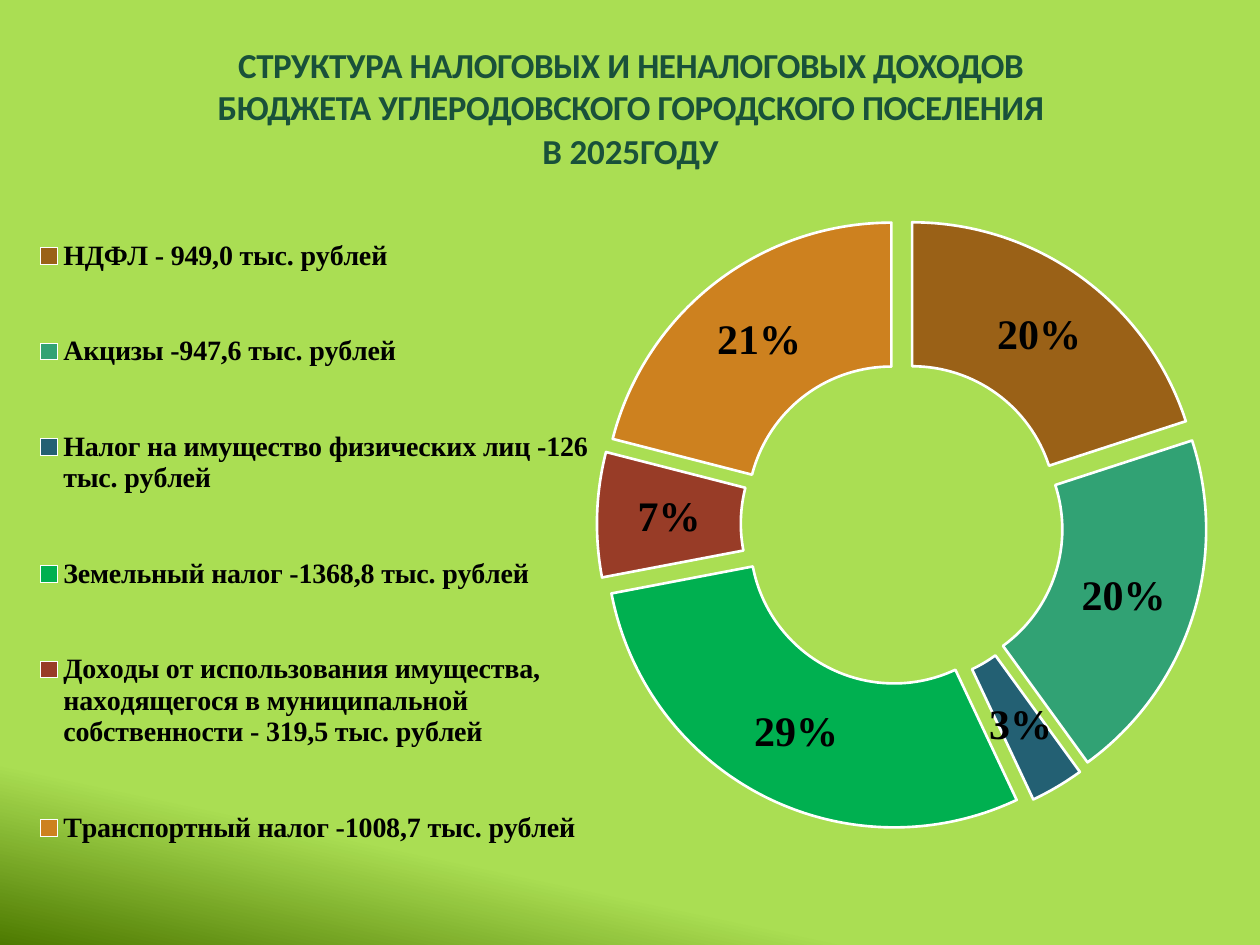
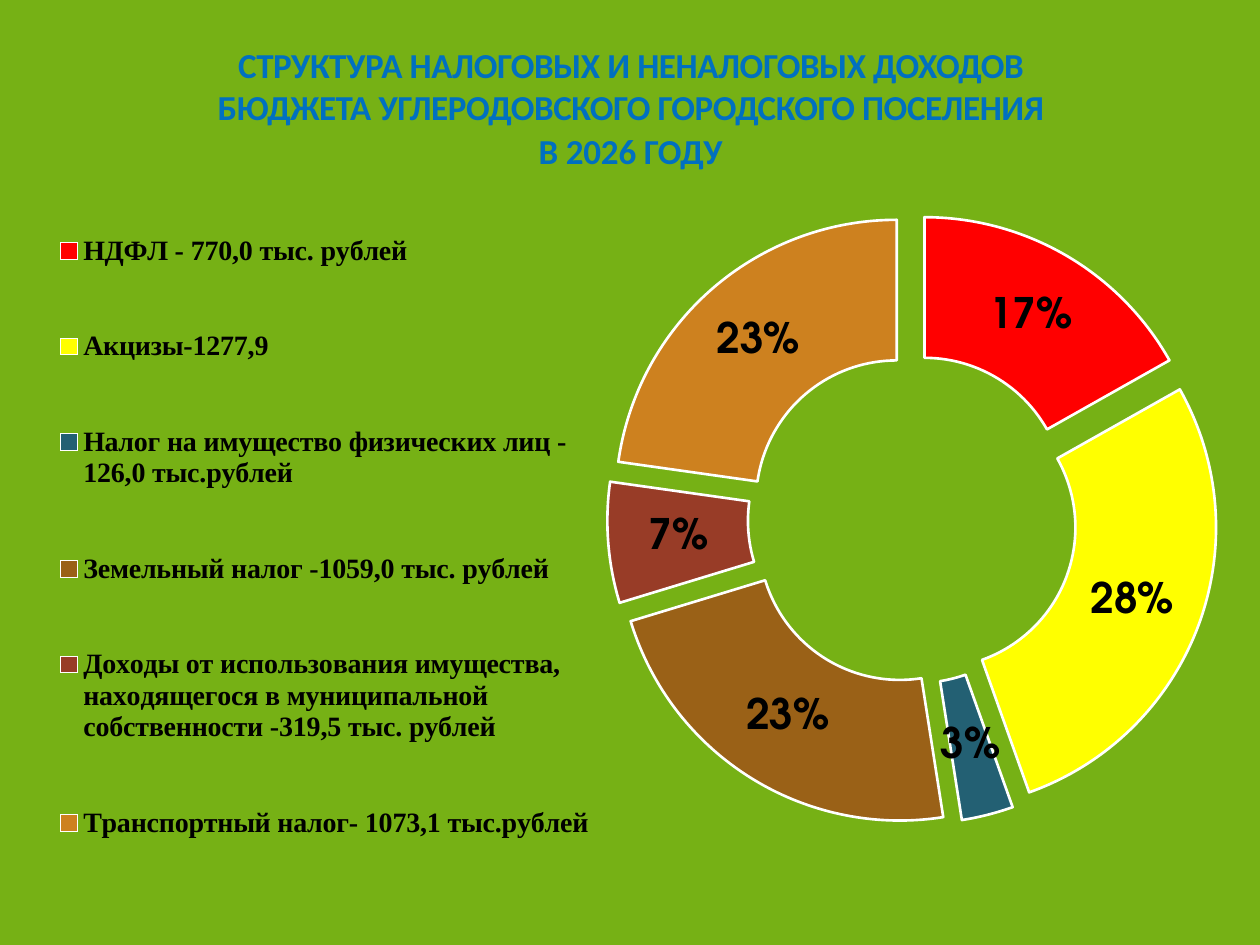
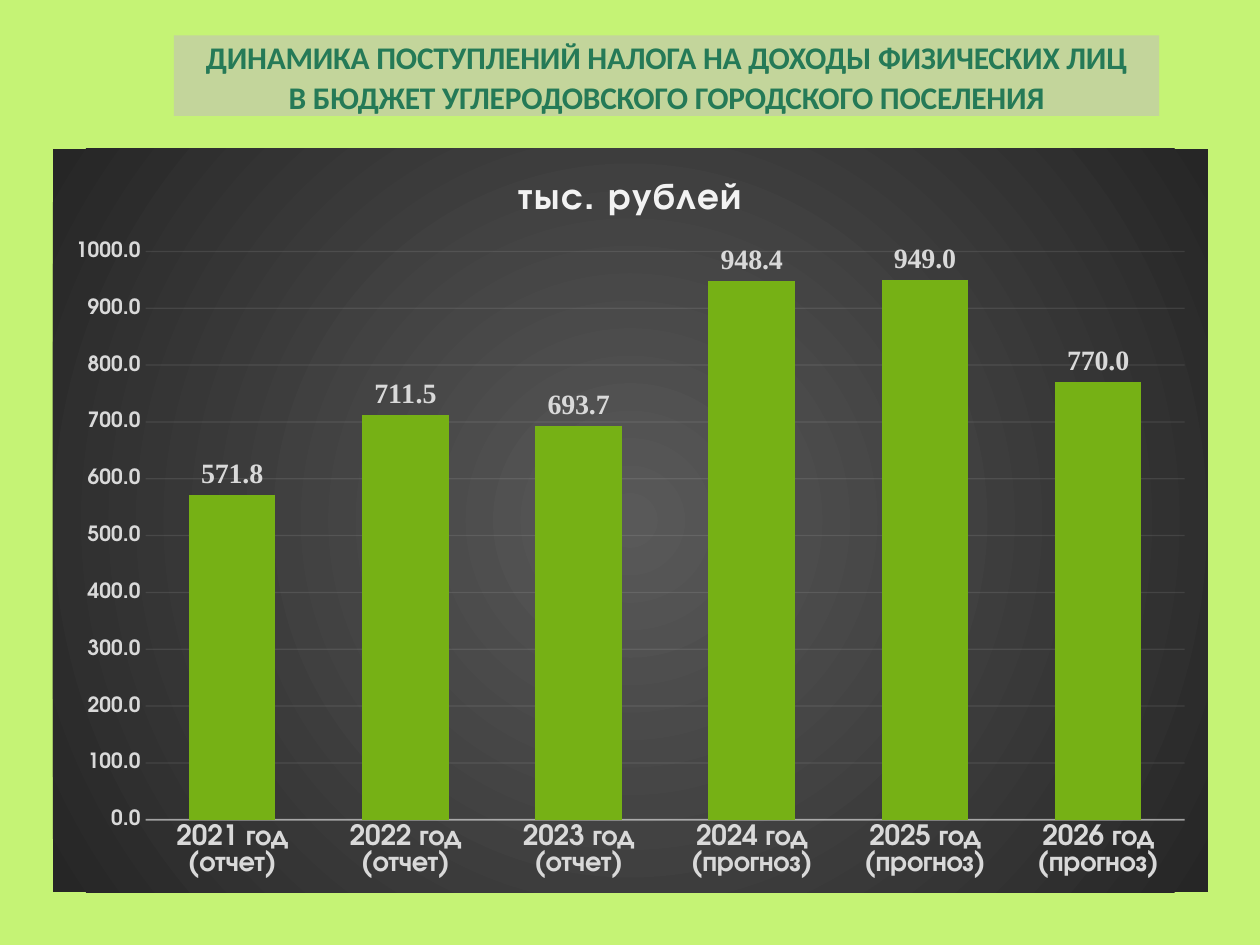
from pptx import Presentation
from pptx import util as u
from pptx.chart import data
from pptx.dml import color
from pptx.enum import chart as charts
from pptx.enum import dml, shapes, text
from pptx.oxml import parse_xml
from pptx.oxml.ns import nsdecls, qn

Pt = u.Pt
WIDTH, HEIGHT = 720, 540
HEADING, SERIF, GEOMETRIC = "Calibri", "Times New Roman", "TeX Gyre Adventor"
BLACK, WHITE, PALE, GREY = "000000", "FFFFFF", "F2F2F2", "D9D9D9"
GREEN, DARK_GREEN, LIME = "76B115", "4C7800", "ACDF55"
BROWN, BLUE, RED, ORANGE = "9A6117", "236073", "983C27", "CD811F"


def rgb(value):
    return color.RGBColor.from_string(value)


def paint(fill, value):
    fill.solid()
    fill.fore_color.rgb = rgb(value)


def style(font, size, value, name=GEOMETRIC, bold=True):
    font.size, font.name, font.bold = Pt(size), name, bold
    font.color.rgb = rgb(value)


def make_translucent(colours, opacity):
    """Give each a:srgbClr element an opacity in percent."""
    for colour in colours:
        colour.append(parse_xml(f'<a:alpha {nsdecls("a")} val="{opacity * 1000}"/>'))


def track(run_properties, points):
    """Set the letter spacing of each a:rPr element."""
    for properties in run_properties:
        properties.set("spc", str(round(points * 100)))


def manual_layout(x, y, w, h, inner=False):
    target = '<c:layoutTarget val="inner"/>' if inner else ""
    modes = '<c:xMode val="edge"/><c:yMode val="edge"/>'
    sizes = "".join(f'<c:{k} val="{v}"/>' for k, v in zip("xywh", (x, y, w, h)))
    return parse_xml(f'<c:layout {nsdecls("c")}><c:manualLayout>{target}{modes}{sizes}'
                     "</c:manualLayout></c:layout>")


def place_layout(parent, layout, after=None):
    """Replace the layout of a chart part, keeping the schema order."""
    for old in parent.findall(qn("c:layout")):
        parent.remove(old)
    if after is None:
        parent.insert(0, layout)
    else:
        parent.find(qn(after)).addnext(layout)


class Deck:
    def __init__(self):
        self.prs = Presentation()
        self.prs.slide_width, self.prs.slide_height = Pt(WIDTH), Pt(HEIGHT)
        self.slide = None

    def new_slide(self, stops, cover, opacity=100):
        """Start a slide with a gradient background under a full-size cover."""
        self.slide = self.prs.slides.add_slide(self.prs.slide_layouts[5])
        fill = self.slide.background.fill
        fill.gradient()
        fill.gradient_angle = 258
        for stop, (position, value) in zip(fill.gradient_stops, stops):
            stop.position = position / 100
            stop.color.rgb = rgb(value)
        sheet = self.slide.shapes.add_shape(
            shapes.MSO_SHAPE.RECTANGLE, 0, 0, Pt(WIDTH), Pt(HEIGHT))
        sheet.shadow.inherit = False
        sheet.line.fill.background()
        paint(sheet.fill, cover)
        if opacity < 100:
            make_translucent(sheet.element.spPr.iter(qn("a:srgbClr")), opacity)
        self.slide.shapes.title.element.addprevious(sheet.element)

    def title(self, box, lines, size, value, band=None, line_spacing=None, gap=1):
        """Fill the title; each line is a pair of text and letter spacing."""
        heading = self.slide.shapes.title
        heading.left, heading.top, heading.width, heading.height = map(Pt, box)
        if band:
            paint(heading.fill, band)
        frame = heading.text_frame
        frame.text = "\n".join(line for line, _ in lines)
        frame.word_wrap = True
        frame.auto_size = text.MSO_AUTO_SIZE.NONE
        frame.vertical_anchor = text.MSO_ANCHOR.TOP
        frame.margin_left = frame.margin_right = frame.margin_bottom = 0
        frame.margin_top = Pt(1)
        for index, (paragraph, (_, spacing)) in enumerate(zip(frame.paragraphs, lines)):
            paragraph.alignment = text.PP_ALIGN.CENTER
            paragraph.space_before = Pt(gap if index else 0)
            if line_spacing:
                paragraph.line_spacing = line_spacing
            for run in paragraph.runs:
                style(run.font, size, value, HEADING)
            track(paragraph._p.iter(qn("a:rPr")), spacing)

    def chart(self, kind, box, name, points, number_format="General"):
        content = data.CategoryChartData(number_format=number_format)
        content.categories = [category for category, *_ in points]
        content.add_series(name, [point[1] for point in points])
        chart = self.slide.shapes.add_chart(kind, *map(Pt, box), content).chart
        style(chart.font, 10, WHITE, bold=False)
        return chart

    def income_ring(self, left, top, sources, explosion, label_font):
        """Draw a doughnut of (source, percent, colour) with its legend on the left."""
        ring = self.chart(charts.XL_CHART_TYPE.DOUGHNUT_EXPLODED,
                          (left, top, 672, 418), "Series 1", sources)
        ring.has_title = False
        ring.has_legend = True
        ring.legend.position = charts.XL_LEGEND_POSITION.BOTTOM
        ring.legend.include_in_layout = False
        style(ring.legend.font, 16, BLACK, SERIF)
        root = ring.element
        place_layout(root.xpath(".//c:plotArea")[0],
                     manual_layout(0.481, 0.029, 0.519, 0.893, inner=True))
        place_layout(root.xpath(".//c:legend")[0],
                     manual_layout(0, 0, 0.481, 1), after="c:legendPos")
        root.xpath(".//c:holeSize")[0].set("val", "61")

        income = ring.plots[0].series[0]
        for old in root.xpath(".//c:ser//c:explosion"):
            old.getparent().remove(old)
        income.format.line.color.rgb = rgb(WHITE)
        root.xpath(".//c:ser/c:spPr")[0].addnext(
            parse_xml(f'<c:explosion {nsdecls("c")} val="{explosion}"/>'))
        for index, (_, _, value) in enumerate(sources):
            sector = income.points[index].format
            paint(sector.fill, value)
            sector.line.color.rgb = rgb(WHITE)
            sector.line.width = Pt(1.5)
        shares = income.data_labels
        shares.show_percentage, shares.show_value = True, False
        shares.number_format, shares.number_format_is_linked = "0%", False
        style(shares.font, 24, BLACK, label_font)

    def yearly_columns(self, box, unit, years):
        columns = self.chart(charts.XL_CHART_TYPE.COLUMN_CLUSTERED, box, unit, years, "0.0")
        root = columns.element
        root.find(qn("c:chart")).addnext(parse_xml(
            f'<c:spPr {nsdecls("c", "a")}><a:gradFill><a:gsLst>'
            '<a:gs pos="0"><a:srgbClr val="595959"/></a:gs>'
            '<a:gs pos="100000"><a:srgbClr val="262626"/></a:gs></a:gsLst>'
            '<a:path path="circle"><a:fillToRect l="50000" t="50000" r="50000" b="50000"/>'
            "</a:path></a:gradFill><a:ln><a:noFill/></a:ln></c:spPr>"))
        columns.has_legend = False
        columns.has_title = True
        columns.chart_title.include_in_layout = False
        caption = columns.chart_title.text_frame
        caption.text = unit
        style(caption.paragraphs[0].runs[0].font, 21.3, PALE)
        track(root.xpath(".//c:title//a:rPr"), 1)

        plot = columns.plots[0]
        plot.gap_width, plot.overlap, plot.vary_by_categories = 100, -24, False
        receipts = plot.series[0]
        paint(receipts.format.fill, GREEN)
        amounts = receipts.data_labels
        amounts.show_value = True
        amounts.position = charts.XL_LABEL_POSITION.OUTSIDE_END
        amounts.number_format, amounts.number_format_is_linked = "0.0", False
        style(amounts.font, 16, GREY, SERIF)

        for axis, size in ((columns.category_axis, 16), (columns.value_axis, 12)):
            axis.major_tick_mark = axis.minor_tick_mark = charts.XL_TICK_MARK.NONE
            style(axis.tick_labels.font, size, GREY)
        scale = columns.value_axis
        scale.minimum_scale, scale.maximum_scale, scale.major_unit = 0, 1000, 100
        scale.tick_labels.number_format = "0.0"
        scale.tick_labels.number_format_is_linked = False
        scale.format.line.fill.background()
        baseline = columns.category_axis.format.line
        grid = scale.major_gridlines.format.line
        for line, width in ((baseline, 1), (grid, 0.75)):
            line.color.rgb = rgb(PALE)
            line.width = Pt(width)
            line.dash_style = dml.MSO_LINE.SOLID
        make_translucent(root.xpath(".//c:catAx/c:spPr//a:srgbClr"), 54)
        make_translucent(root.xpath(".//c:majorGridlines//a:srgbClr"), 10)


def structure_title(deck, year, value):
    deck.title((98.6, 23.8, 523.4, 74.9), [
        ("СТРУКТУРА НАЛОГОВЫХ И НЕНАЛОГОВЫХ ДОХОДОВ "
         "БЮДЖЕТА УГЛЕРОДОВСКОГО ГОРОДСКОГО ПОСЕЛЕНИЯ", -0.25),
        (f"В {year}ГОДУ", -0.1)], 20, value)


def main():
    deck = Deck()

    deck.new_slide([(85, LIME), (100, DARK_GREEN)], "84C823", opacity=3)
    structure_title(deck, "2025", "19513A")
    deck.income_ring(18, 100.8, [
        ("НДФЛ - 949,0 тыс. рублей", 20, BROWN),
        ("Акцизы -947,6 тыс. рублей", 20, "31A274"),
        ("Налог на имущество физических лиц -126 тыс. рублей", 3, BLUE),
        ("Земельный налог -1368,8 тыс. рублей", 29, "00B050"),
        ("Доходы от использования имущества, находящегося в муниципальной "
         "собственности - 319,5 тыс. рублей", 7, RED),
        ("Транспортный налог -1008,7 тыс. рублей", 21, ORANGE),
    ], 12, SERIF)

    deck.new_slide([(99, GREEN), (100, DARK_GREEN)], GREEN)
    structure_title(deck, "2026 ", "0070C0")
    deck.income_ring(23.8, 97.9, [
        ("НДФЛ - 770,0 тыс. рублей", 17, "FF0000"),
        ("Акцизы-1277,9", 28, "FFFF00"),
        ("Налог на имущество физических лиц - 126,0 тыс.рублей", 3, BLUE),
        ("Земельный налог -1059,0 тыс. рублей", 23, BROWN),
        ("Доходы от использования имущества, находящегося в муниципальной "
         "собственности -319,5 тыс. рублей", 7, RED),
        ("Транспортный налог- 1073,1 тыс.рублей", 23, ORANGE),
    ], 17, GEOMETRIC)

    deck.new_slide([(10, LIME), (100, DARK_GREEN)], "C5F375")
    deck.title((99.4, 20.2, 563, 46.1), [
        ("ДИНАМИКА ПОСТУПЛЕНИЙ НАЛОГА НА ДОХОДЫ ФИЗИЧЕСКИХ ЛИЦ", -0.15),
        ("В БЮДЖЕТ УГЛЕРОДОВСКОГО ГОРОДСКОГО ПОСЕЛЕНИЯ", -0.15),
    ], 18, "257A57", band="C3D59B", line_spacing=1.02, gap=0.7)
    deck.yearly_columns((30.2, 85, 660, 424.8), "тыс. рублей", [
        ("2021 год (отчет)", 571.8),
        ("2022 год (отчет)", 711.5),
        ("2023 год (отчет)", 693.7),
        ("2024 год (прогноз)", 948.4),
        ("2025 год (прогноз)", 949),
        ("2026 год (прогноз)", 770),
    ])

    deck.prs.save("out.pptx")


if __name__ == "__main__":
    main()
